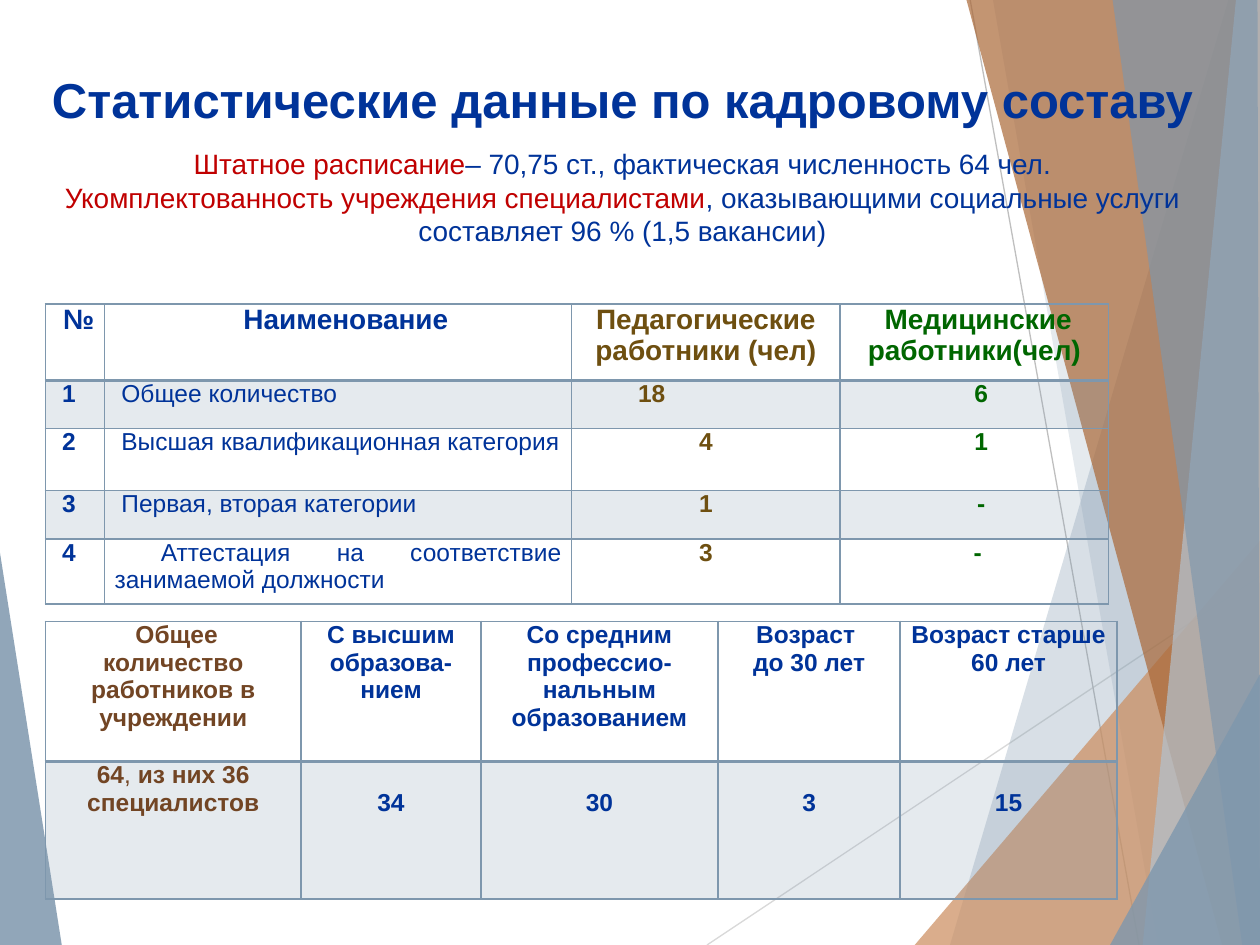
"""Build a staffing statistics slide with two tables over a faceted background."""
import pptx
import pptx.util
import pptx.dml.color
import pptx.enum.shapes
import pptx.enum.text
import pptx.oxml
import pptx.oxml.ns

Pt = pptx.util.Pt
ALIGN = pptx.enum.text.PP_ALIGN
ANCHOR = pptx.enum.text.MSO_ANCHOR

THEME = {
    "font": "Arial", "title": 28, "lead": 16, "body": 14,
    "blue": "003399", "red": "C00000", "ochre": "6E4F10", "green": "006600",
    "brown": "724524", "steel": "7E97AD", "mist": "B2C1CE", "sand": "CC8E60",
    "copper": "AA6837", "light": "D9D9D9", "silver": "BFBFBF",
}

FACETS = [
    ("steel", 85, [(0, 316), (35.3, 540), (0, 540)]),
    ("light", None, [(404, 540), (720, 329.3)]),
    ("silver", None, [(554.4, 0), (650.9, 540)]),
    ("steel", 30, [(702, 0), (542.9, 540), (720, 540), (720, 0)]),
    ("steel", 20, [(567.4, 0), (661.7, 540), (720, 540), (720, 0)]),
    ("sand", 72, [(522.7, 540), (720, 308.9), (720, 540)]),
    ("copper", 70, [(552.3, 0), (698.4, 540), (720, 540), (720, 0)]),
    ("mist", 70, [(706.3, 0), (653, 540), (720, 540), (720, 0)]),
    ("steel", 65, [(635.8, 0), (709.9, 540), (720, 540), (718.6, 0)]),
    ("steel", 80, [(634.3, 540), (720, 385.2), (720, 540)]),
]

TITLE = [
    ([("Статистические данные по кадровому составу", "blue", True)], "title", {}),
    ([("Штатное расписание", "red", False),
      ("– 70,75 ст., фактическая численность 64 чел.", "blue", False)],
     "lead", {"space_before": Pt(10.5), "line_spacing": Pt(19.2)}),
    ([("Укомплектованность учреждения специалистами", "red", False),
      (", оказывающими социальные услуги составляет 96 % (1,5 вакансии)", "blue", False)],
     "lead", {"space_before": Pt(0), "line_spacing": Pt(19.2)}),
]

STAFF = {
    "at": (25.9, 173.7), "columns": [33.8, 267, 153.4, 153.4],
    "rows": [43.7, 27.6, 35.4, 27.6, 37.3],
    "cells": [
        [" №", " Наименование ", " Педагогические \nработники (чел)", " Медицинские работники(чел)"],
        [" 1", " Общее количество", "18", " 6"],
        [" 2", " Высшая квалификационная категория", "4", " 1"],
        [" 3", " Первая, вторая категории", "1", " -"],
        [" 4", " Аттестация на соответствие занимаемой должности", "3", " -"],
    ],
    "colours": ["blue", "blue", "ochre", "green"], "header_size": "lead",
    "plain_column": 1, "justified": {(0, 0)} | {(r, c) for r in range(1, 5) for c in (0, 1)},
    "indents": {(0, 1): (8.9, 0, 0), (1, 2): (0, 0, 62),
                (1, 3): (3.9, 0, 0), (2, 3): (3.9, 0, 0), (3, 3): (3.9, 0, 0)},
}

EDUCATION = {
    "at": (25.9, 355), "columns": [146.2, 102.7, 135.6, 104, 124],
    "rows": [80, 78.8],
    "cells": [
        [" Общее количество работников в учреждении", "С высшим образова-нием",
         "Со средним профессио-нальным образованием", "Возраст \nдо 30 лет", "Возраст старше 60 лет"],
        [[("64", True), (", ", False), ("из них 36 специалистов", True)], "34", "30", "3", "15"],
    ],
    "colours": ["brown", "blue", "blue", "blue", "blue"], "header_size": "body",
    "plain_column": None, "justified": set(),
    "indents": {(1, column): (0, 16, 0) for column in range(1, 5)},
}


def rgb(name):
    return pptx.dml.color.RGBColor.from_string(THEME[name])


def set_all(target, values):
    for name, value in values.items():
        setattr(target, name, value)


def fill_solid(fill, element, colour, opacity):
    fill.solid()
    fill.fore_color.rgb = rgb(colour)
    solid = element.find(pptx.oxml.ns.qn("a:solidFill"))
    alpha = pptx.oxml.parse_xml(f'<a:alpha {pptx.oxml.ns.nsdecls("a")} val="{opacity * 1000}"/>')
    solid[0].append(alpha)


def add_run(paragraph, text, colour, size, bold):
    run = paragraph.add_run()
    run.text = text
    set_all(run.font, {"name": THEME["font"], "size": Pt(THEME[size]), "bold": bold})
    run.font.color.rgb = rgb(colour)


def add_facet(slide, colour, opacity, points):
    corners = [(Pt(x), Pt(y)) for x, y in points]
    if opacity is None:
        line = slide.shapes.add_connector(
            pptx.enum.shapes.MSO_CONNECTOR.STRAIGHT, *corners[0], *corners[1])
        line.line.color.rgb = rgb(colour)
        line.line.width = Pt(0.75)
        line.element.spPr.append(pptx.oxml.parse_xml(
            f'<a:effectLst {pptx.oxml.ns.nsdecls("a")}/>'))
        return
    builder = slide.shapes.build_freeform(*corners[0], scale=1.0)
    builder.add_line_segments(corners[1:], close=True)
    shape = builder.convert_to_shape()
    shape.shadow.inherit = False
    shape.line.fill.background()
    fill_solid(shape.fill, shape.element.spPr, colour, opacity)


def format_title(slide):
    title = slide.shapes.title
    title.element.getparent().append(title.element)
    set_all(title, {"left": Pt(2.9), "top": Pt(0), "width": Pt(705.6), "height": Pt(157.7)})
    frame = title.text_frame
    set_all(frame, {"word_wrap": True, "auto_size": pptx.enum.text.MSO_AUTO_SIZE.NONE,
                    "vertical_anchor": ANCHOR.TOP, "margin_top": Pt(39.8),
                    "margin_left": Pt(7.2), "margin_right": Pt(7.2)})
    for index, (runs, size, spacing) in enumerate(TITLE):
        paragraph = frame.add_paragraph() if index else frame.paragraphs[0]
        set_all(paragraph, {"alignment": ALIGN.CENTER, **spacing})
        for text, colour, bold in runs:
            add_run(paragraph, text, colour, size, bold)


def set_borders(properties, row):
    widths = {"L": 1, "R": 1, "T": 2 if row == 1 else 1, "B": 2 if row == 0 else 1}
    for index, (side, width) in enumerate(widths.items()):
        properties.insert(index, pptx.oxml.parse_xml(
            f'<a:ln{side} {pptx.oxml.ns.nsdecls("a")} w="{Pt(width)}"><a:solidFill>'
            f'<a:srgbClr val="{THEME["steel"]}"/></a:solidFill></a:ln{side}>'))


def fill_cell(cell, content, data, row, column):
    left, top, right = data["indents"].get((row, column), (0, 0, 0))
    set_all(cell, {"margin_left": Pt(5.8 + left), "margin_right": Pt(5.8 + right),
                   "margin_top": Pt(top), "margin_bottom": Pt(0),
                   "vertical_anchor": ANCHOR.TOP})
    size = data["header_size"] if row == 0 else "body"
    bold = row == 0 or column != data["plain_column"]
    paragraphs = ([[(text, bold)] for text in content.split("\n")]
                  if isinstance(content, str) else [content])
    for index, runs in enumerate(paragraphs):
        frame = cell.text_frame
        paragraph = frame.add_paragraph() if index else frame.paragraphs[0]
        paragraph.alignment = ALIGN.JUSTIFY if (row, column) in data["justified"] else ALIGN.CENTER
        for text, weight in runs:
            add_run(paragraph, text, data["colours"][column], size, weight)
    properties = cell._tc.get_or_add_tcPr()
    if row % 2:
        fill_solid(cell.fill, properties, "steel", 20)
    else:
        cell.fill.background()
    set_borders(properties, row)


def add_data_table(slide, data):
    columns, rows = data["columns"], data["rows"]
    table = slide.shapes.add_table(
        len(rows), len(columns), *map(Pt, data["at"]), Pt(sum(columns)), Pt(sum(rows))).table
    set_all(table, {"first_row": False, "horz_banding": False})
    for column, width in zip(table.columns, columns):
        column.width = Pt(width)
    for row, height in enumerate(rows):
        table.rows[row].height = Pt(height)
        for column, content in enumerate(data["cells"][row]):
            fill_cell(table.cell(row, column), content, data, row, column)


def main():
    presentation = pptx.Presentation()
    set_all(presentation, {"slide_width": Pt(720), "slide_height": Pt(540)})
    slide = presentation.slides.add_slide(presentation.slide_layouts[5])
    for facet in FACETS:
        add_facet(slide, *facet)
    format_title(slide)
    for data in (STAFF, EDUCATION):
        add_data_table(slide, data)
    presentation.save("out.pptx")


if __name__ == "__main__":
    main()
